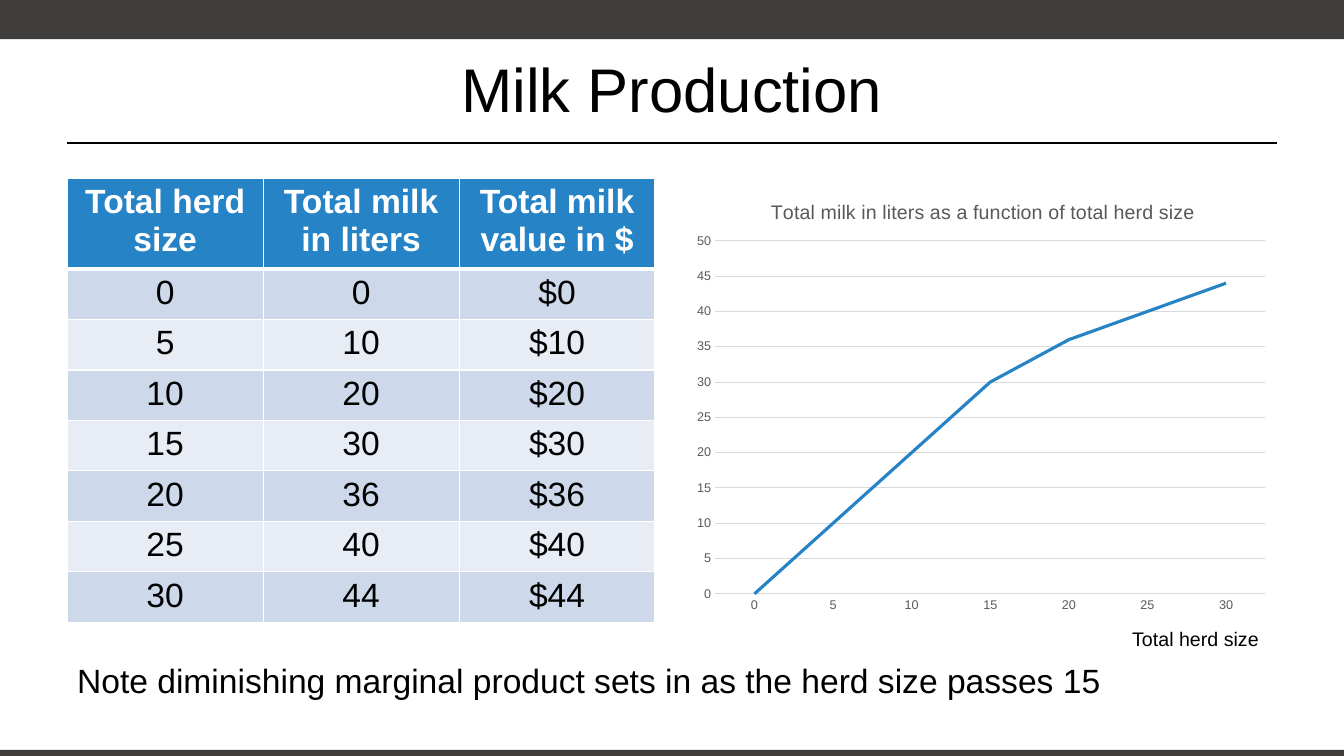
"""Build the milk production slide with its table and line chart."""
from lxml.etree import SubElement as Sub
from pptx import Presentation
from pptx.chart.data import CategoryChartData as ChartData
from pptx.dml.color import RGBColor as RGB
from pptx.enum.chart import XL_CHART_TYPE as Kind, XL_MARKER_STYLE as Mark, XL_TICK_MARK as Tick
from pptx.enum.shapes import MSO_CONNECTOR as Link, MSO_SHAPE as Shape
from pptx.enum.text import MSO_ANCHOR as Anchor, PP_ALIGN as Align
from pptx.oxml import parse_xml
from pptx.oxml.ns import nsdecls, qn
from pptx.util import Pt

BLACK = RGB(0, 0, 0)
WHITE = RGB(255, 255, 255)
DARK = RGB(0x3E, 0x3D, 0x3C)
BLUE = RGB(0x26, 0x83, 0xC6)
GREY = RGB(0x59, 0x59, 0x59)
PALE = RGB(0xD9, 0xD9, 0xD9)
BANDS = [RGB(0xE8, 0xED, 0xF5), RGB(0xCD, 0xD9, 0xEA)]
HERD = [0, 5, 10, 15, 20, 25, 30]
MILK = [0, 10, 20, 30, 36, 40, 44]


def style(font, size, color, bold=False):
    font.name, font.size, font.bold = "Arial", Pt(size), bold
    font.color.rgb = color


def place(parent, index, **sides):
    for old in parent.findall(qn("c:layout")):
        parent.remove(old)
    node = parse_xml(f"<c:layout {nsdecls('c')}><c:manualLayout/></c:layout>")
    for name, value in sides.items():
        Sub(node[0], qn(f"c:{name}")).set("val", str(value))
    parent.insert(index, node)


deck = Presentation()
deck.slide_width, deck.slide_height = Pt(960), Pt(540)
slide = deck.slides.add_slide(deck.slide_layouts[6])
shapes = slide.shapes

for top, height in [(0, 28), (535.7, 7.2)]:
    bar = shapes.add_shape(Shape.RECTANGLE, 0, Pt(top), Pt(960), Pt(height))
    bar.shadow.inherit = False
    bar.fill.solid()
    bar.fill.fore_color.rgb = DARK
    bar.line.fill.background()

rule = shapes.add_connector(Link.STRAIGHT, Pt(48), Pt(102), Pt(912), Pt(102))
rule.line.color.rgb = BLACK
rule.line.width = Pt(1.25)
Sub(rule._element.spPr, qn("a:effectLst"))

texts = [
    ("Milk Production", 48, 18, 864, 90, 44, Align.CENTER, Anchor.MIDDLE, True),
    ("Total herd size", 801.5, 444.3, 105, 24.3, 14, Align.CENTER, Anchor.TOP, False),
    ("Note diminishing marginal product sets in as the herd size passes 15",
     48, 468, 864, 36, 24, Align.LEFT, Anchor.TOP, True),
]
for text, left, top, width, height, size, align, anchor, wrap in texts:
    box = shapes.add_textbox(Pt(left), Pt(top), Pt(width), Pt(height))
    frame = box.text_frame
    frame.word_wrap, frame.vertical_anchor = wrap, anchor
    para = frame.paragraphs[0]
    para.text, para.alignment = text, align
    style(para.font, size, BLACK)

data = ChartData()
data.categories = [str(herd) for herd in HERD]
data.add_series("Series 1", MILK)
chart = shapes.add_chart(
    Kind.LINE, Pt(488.9), Pt(127.4), Pt(422.6), Pt(316.8), data).chart
style(chart.font, 10, BLACK)
chart.has_legend = False
chart.has_title = True
title = chart.chart_title
para = title.text_frame.paragraphs[0]
para.text = "Total milk in liters as a function of total herd size"
style(para.font, 14, GREY)
place(title._element, 1, xMode="edge", yMode="edge", x=0.14, y=0.04)
place(chart._chartSpace.chart.plotArea, 0, layoutTarget="inner", xMode="edge",
      yMode="edge", x=0.052, y=0.141, w=0.93, h=0.796)
plot = chart.plots[0]
plot.vary_by_categories = False
line = plot.series[0]
line.smooth = False
line.marker.style = Mark.NONE
line.format.line.color.rgb = BLUE
line.format.line.width = Pt(2.25)
for axis in (chart.category_axis, chart.value_axis):
    axis.major_tick_mark = axis.minor_tick_mark = Tick.NONE
    style(axis.tick_labels.font, 9, GREY)
chart.value_axis.format.line.fill.background()
chart.value_axis.minimum_scale, chart.value_axis.maximum_scale = 0, 50
chart.value_axis.major_unit = 5
chart.value_axis.has_major_gridlines = True
for thin in (chart.category_axis.format.line, chart.value_axis.major_gridlines.format.line):
    thin.color.rgb = PALE
    thin.width = Pt(0.75)

rows = [("Total herd size", "Total milk in liters", "Total milk value in $")]
rows += [(str(herd), str(milk), f"${milk}") for herd, milk in zip(HERD, MILK)]
table = shapes.add_table(len(rows), 3, Pt(48), Pt(127.4), Pt(420), Pt(236)).table
for row, words in enumerate(rows):
    head = row == 0
    for col, word in enumerate(words):
        cell = table.cell(row, col)
        cell.fill.solid()
        cell.fill.fore_color.rgb = BLUE if head else BANDS[row % 2]
        para = cell.text_frame.paragraphs[0]
        para.text, para.alignment = word, Align.CENTER
        style(para.font, 24, WHITE if head else BLACK, head)
        props = cell._tc.get_or_add_tcPr()
        for index, side in enumerate("LRTB"):
            thick = (head and side == "B") or (row == 1 and side == "T")
            props.insert(index, parse_xml(
                f'<a:ln{side} {nsdecls("a")} w="{Pt(3 if thick else 1)}"><a:solidFill>'
                f'<a:srgbClr val="{WHITE}"/></a:solidFill></a:ln{side}>'))

deck.save("out.pptx")
